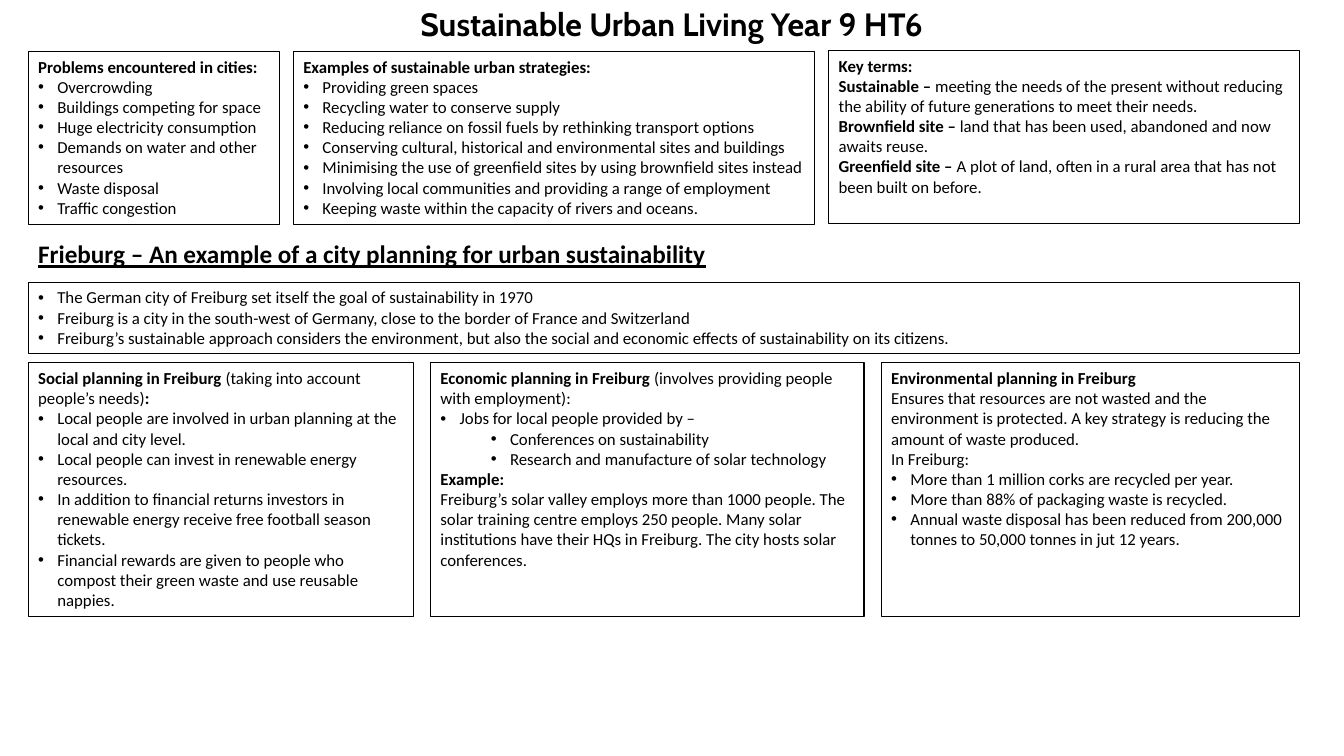
"""Build the revision slide on sustainable urban living."""
from lxml.etree import SubElement
from pptx import Presentation
from pptx.dml.color import RGBColor
from pptx.enum.shapes import MSO_SHAPE
from pptx.enum.text import MSO_ANCHOR, MSO_AUTO_SIZE, PP_ALIGN
from pptx.oxml.ns import qn
from pptx.util import Inches, Pt

BLACK = "000000"
TITLE = "Sustainable Urban Living Year 9 HT6"
HEAD = "Frieburg – An example of a city planning for urban sustainability"

# Each paragraph is (bullet depth, text); ** switches bold on and off.
ISSUES = [
    (0, "**Problems encountered in cities:**"),
    (1, "Overcrowding"),
    (1, "Buildings competing for space"),
    (1, "Huge electricity consumption"),
    (1, "Demands on water and other resources"),
    (1, "Waste disposal"),
    (1, "Traffic congestion"),
]
PLANS = [
    (0, "**Examples of sustainable urban strategies:**"),
    (1, "Providing green spaces"),
    (1, "Recycling water to conserve supply"),
    (1, "Reducing reliance on fossil fuels by rethinking transport options"),
    (1, "Conserving cultural, historical and environmental sites and buildings"),
    (1, "Minimising the use of greenfield sites by using brownfield sites instead"),
    (1, "Involving local communities and providing a range of employment"),
    (1, "Keeping waste within the capacity of rivers and oceans."),
]
TERMS = [
    (0, "**Key terms:**"),
    (0, "**Sustainable – **meeting the needs of the present without reducing "
        "the ability of future generations to meet their needs."),
    (0, "**Brownfield site –** land that has been used, abandoned and now awaits reuse."),
    (0, "**Greenfield site – **A plot of land, often in a rural area "
        "that has not been built on before."),
]
CITY = [
    (1, "The German city of Freiburg set itself the goal of sustainability in 1970"),
    (1, "Freiburg is a city in the south-west of Germany, "
        "close to the border of France and Switzerland"),
    (1, "Freiburg’s sustainable approach considers the environment, but also "
        "the social and economic effects of sustainability on its citizens."),
]
SOCIAL = [
    (0, "**Social planning in Freiburg **(taking into account people’s needs)**:**"),
    (1, "Local people are involved in urban planning at the local and city level."),
    (1, "Local people can invest in renewable energy resources."),
    (1, "In addition to financial returns investors in renewable energy "
        "receive free football season tickets."),
    (1, "Financial rewards are given to people who compost their green waste "
        "and use reusable nappies."),
]
WORK = [
    (0, "**Economic planning in Freiburg **(involves providing people with employment):"),
    (1, "Jobs for local people provided by –"),
    (2, "Conferences on sustainability"),
    (2, "Research and manufacture of solar technology"),
    (0, "**Example:**"),
    (0, "Freiburg’s solar valley employs more than 1000 people. The solar training "
        "centre employs 250 people. Many solar institutions have their HQs in Freiburg. "
        "The city hosts solar conferences."),
]
GREEN = [
    (0, "**Environmental planning in Freiburg**"),
    (0, "Ensures that resources are not wasted and the environment is protected. "
        "A key strategy is reducing the amount of waste produced."),
    (0, "In Freiburg:"),
    (1, "More than 1 million corks are recycled per year."),
    (1, "More than 88% of packaging waste is recycled."),
    (1, "Annual waste disposal has been reduced from 200,000 tonnes "
        "to 50,000 tonnes in jut 12 years."),
]
LEFT = 0.28
ROWS = [
    (1.72, 0.14, [(0.51, 2.49, ISSUES), (0.51, 5.17, PLANS), (0.5, 4.67, TERMS)]),
    (0.71, 0, [(2.8, 12.61, CITY)]),
    (2.52, 0.17, [(3.6, 3.82, SOCIAL), (3.6, 4.3, WORK), (3.6, 4.15, GREEN)]),
]


def color(code):
    return RGBColor.from_string(code)


def add_run(para, text, size, bold, face="Calibri"):
    run = para.add_run()
    run.text = text
    font = run.font
    font.name, font.size, font.bold = face, Pt(size), bold
    font.color.rgb = color(BLACK)
    return run


def add_bullet(para, depth):
    para.level = depth - 1
    props = para._p.get_or_add_pPr()
    props.set("marL", str(Inches(0.19 + 0.5 * (depth - 1))))
    props.set("indent", str(Inches(-0.19)))
    SubElement(props, qn("a:buFont"), typeface="Arial")
    SubElement(props, qn("a:buChar"), char="•")


def add_box(slide, left, top, width, height, paras):
    box = slide.shapes.add_shape(
        MSO_SHAPE.RECTANGLE, Inches(left), Inches(top), Inches(width), Inches(height))
    box.shadow.inherit = False
    box.fill.background()
    box.line.color.rgb = color(BLACK)
    box.line.width = Pt(0.75)
    frame = box.text_frame
    frame.word_wrap = True
    frame.auto_size = MSO_AUTO_SIZE.SHAPE_TO_FIT_TEXT
    frame.vertical_anchor = MSO_ANCHOR.TOP
    for i, (depth, text) in enumerate(paras):
        para = frame.add_paragraph() if i else frame.paragraphs[0]
        para.alignment = PP_ALIGN.LEFT
        if depth:
            add_bullet(para, depth)
        for j, part in enumerate(text.split("**")):
            if part:
                add_run(para, part, 12, j % 2 == 1)


def add_title(slide):
    title = slide.shapes.title
    title.left, title.top = Inches(0), Inches(0.04)
    title.width, title.height = Inches(13.33), Inches(0.44)
    frame = title.text_frame
    frame.auto_size = MSO_AUTO_SIZE.NONE
    frame.vertical_anchor = MSO_ANCHOR.BOTTOM
    para = frame.paragraphs[0]
    para.alignment = PP_ALIGN.CENTER
    para.line_spacing = 0.9
    add_run(para, TITLE, 23, True, "Cabin")


def add_head(slide):
    box = slide.shapes.add_textbox(Inches(LEFT), Inches(2.32), Inches(6.88), Inches(0.4))
    frame = box.text_frame
    frame.word_wrap = False
    frame.auto_size = MSO_AUTO_SIZE.SHAPE_TO_FIT_TEXT
    add_run(frame.paragraphs[0], HEAD, 18, True).font.underline = True


def main():
    deck = Presentation()
    deck.slide_width, deck.slide_height = Inches(13.33), Inches(7.5)
    slide = deck.slides.add_slide(deck.slide_layouts[5])
    add_title(slide)
    add_head(slide)
    for height, gap, boxes in ROWS:
        left = LEFT
        for top, width, paras in boxes:
            add_box(slide, left, top, width, height, paras)
            left += width + gap
    deck.save("out.pptx")


if __name__ == "__main__":
    main()
